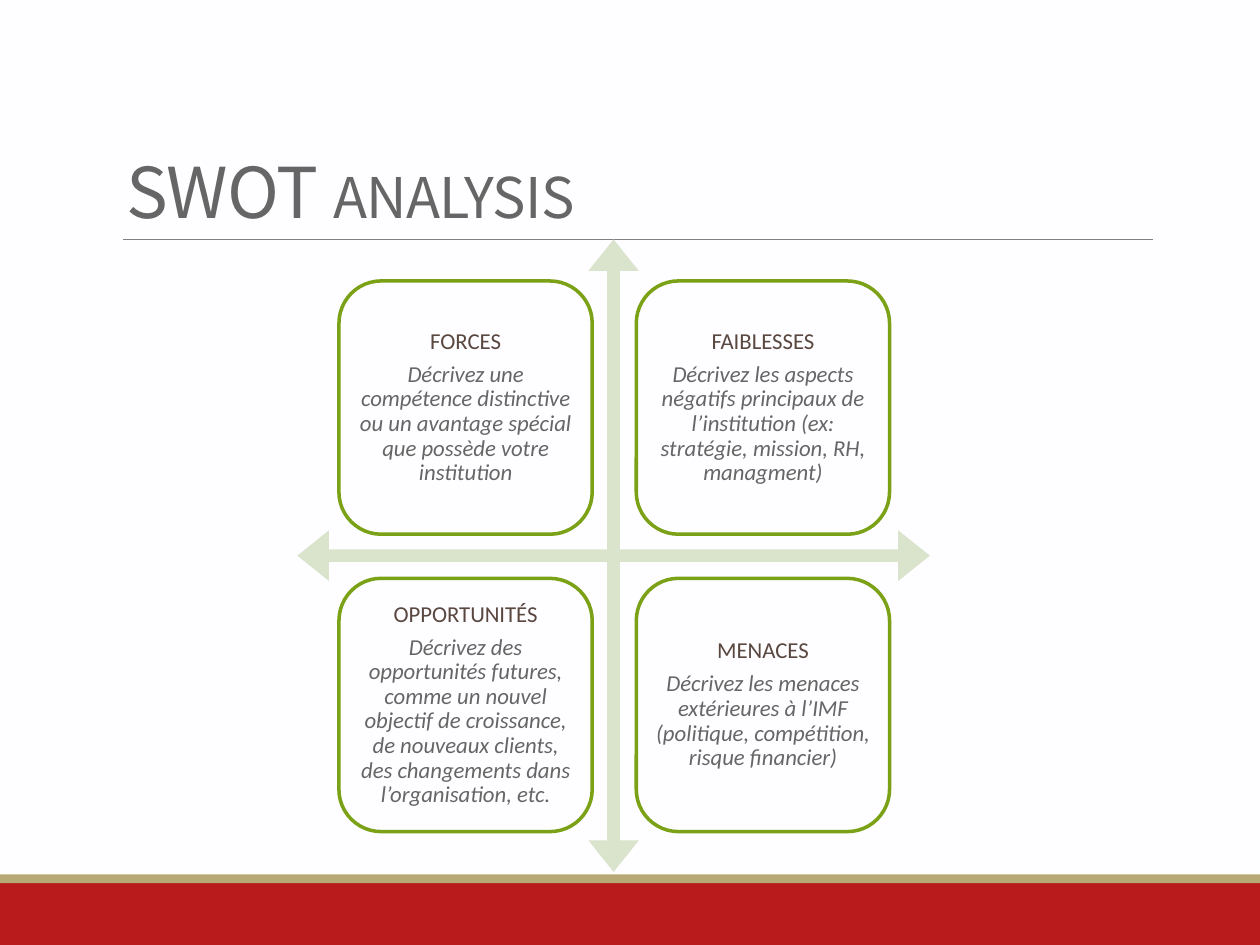
"""Build the SWOT analysis slide with its four quadrants around a cross of arrows."""
import pptx
import pptx.dml.color
import pptx.enum.shapes
import pptx.enum.text
import pptx.util
from lxml import etree
from pptx.util import Inches, Pt

SHAPE = pptx.enum.shapes.MSO_SHAPE
ANCHOR = pptx.enum.text.MSO_ANCHOR
CENTER = pptx.enum.text.PP_ALIGN.CENTER

TITLE = [("SWOT ", 40), ("ANALYSIS", 32)]
QUADRANTS = [
    ("FORCES", "Décrivez une compétence distinctive ou un avantage spécial que possède votre institution"),
    ("FAIBLESSES", "Décrivez les aspects négatifs principaux de l’institution (ex: stratégie, mission, RH, managment)"),
    ("OPPORTUNITÉS", "Décrivez des opportunités futures, comme un nouvel objectif de croissance, "
                     "de nouveaux clients, des changements dans l’organisation, etc."),
    ("MENACES", "Décrivez les menaces extérieures à l’IMF (politique, compétition, risque financier)"),
]
BANDS = [(7, 0.5, "B91A1B"), (6.94, 0.07, "B8AA76")]
PAPER, GREY, BROWN = "FEFDFF", "666666", "594740"
CROSS_LEFT, CROSS_TOP, CROSS_SIZE = 2.36, 1.9, 5.02
CARD_SIZE, CARD_INSET, CARD_STEP = 2.01, 0.33, 2.36


def rgb(value):
    return pptx.dml.color.RGBColor.from_string(value)


def add_block(slide, kind, left, top, width, height, fill, outline=None):
    block = slide.shapes.add_shape(kind, Inches(left), Inches(top), Inches(width), Inches(height))
    block.shadow.inherit = False
    block.fill.solid()
    block.fill.fore_color.rgb = rgb(fill)
    if outline:
        block.line.color.rgb = rgb(outline)
        block.line.width = Pt(2)
    else:
        block.line.fill.background()
    return block


def add_run(paragraph, text, font, size, color, italic=False):
    run = paragraph.add_run()
    run.text = text
    run.font.name = font
    run.font.size = Pt(size)
    run.font.color.rgb = rgb(color)
    run.font.italic = italic
    return run


def add_title(slide):
    title = slide.shapes.title
    title.left, title.top, title.width, title.height = map(Inches, (0.9, 0.31, 8.25, 1.59))
    frame = title.text_frame
    frame.word_wrap = True
    frame.auto_size = pptx.enum.text.MSO_AUTO_SIZE.NONE
    frame.vertical_anchor = ANCHOR.BOTTOM
    heading = frame.paragraphs[0]
    heading.alignment = pptx.enum.text.PP_ALIGN.LEFT
    heading.line_spacing = 0.85
    for text, size in TITLE:
        run = add_run(heading, text, "Noto Sans CJK KR", size, GREY)
        run.font._element.set("spc", "-40")


def add_rule(slide):
    rule = slide.shapes.add_connector(pptx.enum.shapes.MSO_CONNECTOR.STRAIGHT,
                                      Inches(0.98), Inches(1.9), Inches(9.15), Inches(1.9))
    rule.line.color.rgb = rgb("808080")
    rule.line.width = Pt(0.5)
    etree.SubElement(rule._element.spPr, pptx.oxml.ns.qn("a:effectLst"))


def add_quadrant(slide, index, heading, description):
    row, column = divmod(index, 2)
    card = add_block(slide, SHAPE.ROUNDED_RECTANGLE,
                     CROSS_LEFT + CARD_INSET + column * CARD_STEP,
                     CROSS_TOP + CARD_INSET + row * CARD_STEP,
                     CARD_SIZE, CARD_SIZE, PAPER, "7BA217")
    frame = card.text_frame
    frame.word_wrap = True
    frame.vertical_anchor = ANCHOR.MIDDLE
    frame.margin_left = frame.margin_right = frame.margin_top = frame.margin_bottom = Inches(0.05)
    lines = [(frame.paragraphs[0], heading, BROWN, False),
             (frame.add_paragraph(), description, GREY, True)]
    for paragraph, text, color, italic in lines:
        paragraph.alignment = CENTER
        paragraph.line_spacing = 0.9
        paragraph.space_after = Pt(4.8)
        add_run(paragraph, text, "Calibri", 13, color, italic)


def main():
    deck = pptx.Presentation()
    deck.slide_width, deck.slide_height = Inches(10), Inches(7.5)
    slide = deck.slides.add_slide(deck.slide_layouts[5])
    slide.background.fill.solid()
    slide.background.fill.fore_color.rgb = rgb(PAPER)
    for top, height, color in BANDS:
        add_block(slide, SHAPE.RECTANGLE, 0, top, 10, height, color)
    add_rule(slide)
    add_title(slide)
    cross = add_block(slide, SHAPE.QUAD_ARROW, CROSS_LEFT, CROSS_TOP, CROSS_SIZE, CROSS_SIZE, "DAE4CC")
    for position, share in enumerate((0.02, 0.04, 0.05)):
        cross.adjustments[position] = share
    for index, (heading, description) in enumerate(QUADRANTS):
        add_quadrant(slide, index, heading, description)
    deck.save("out.pptx")


if __name__ == "__main__":
    main()
